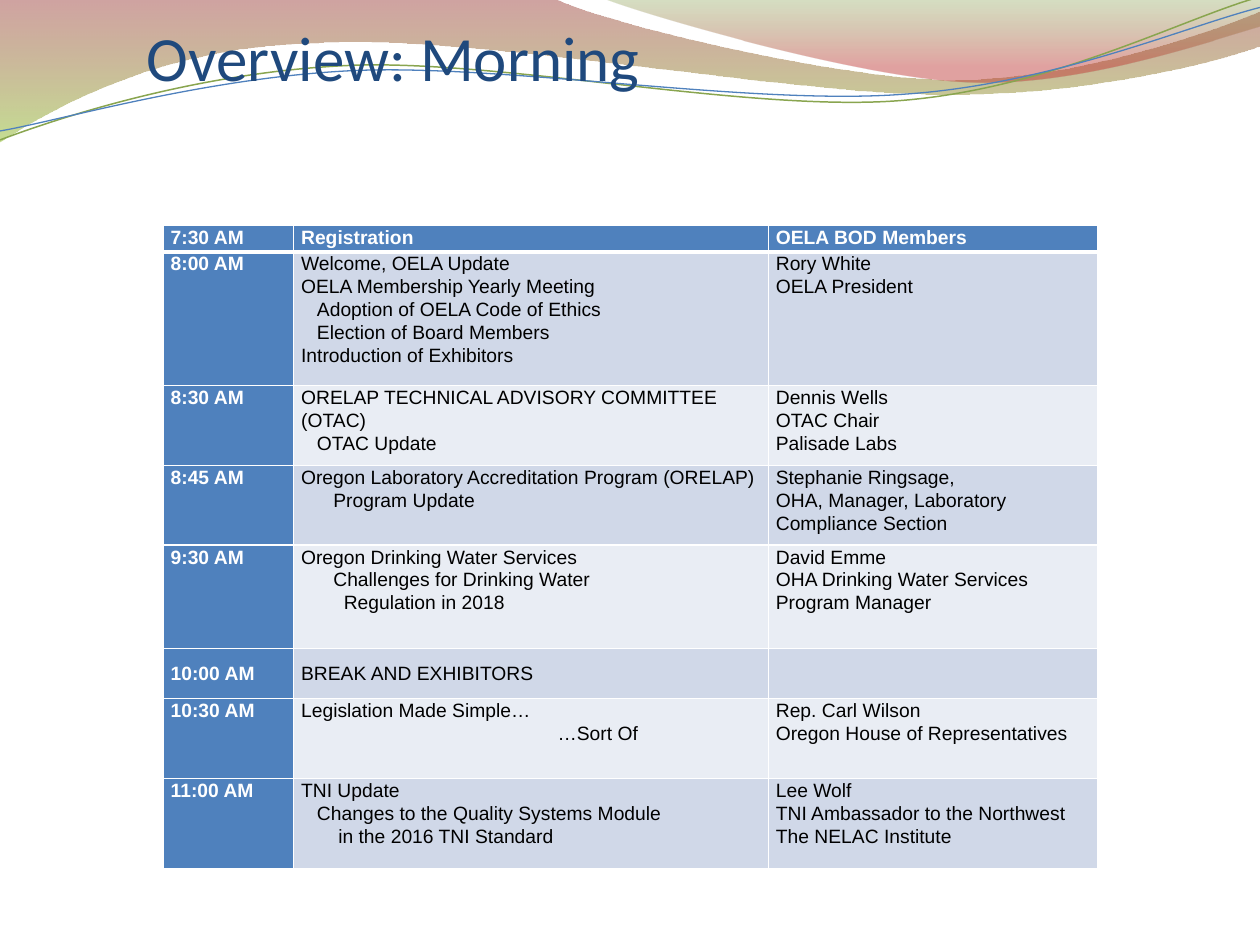
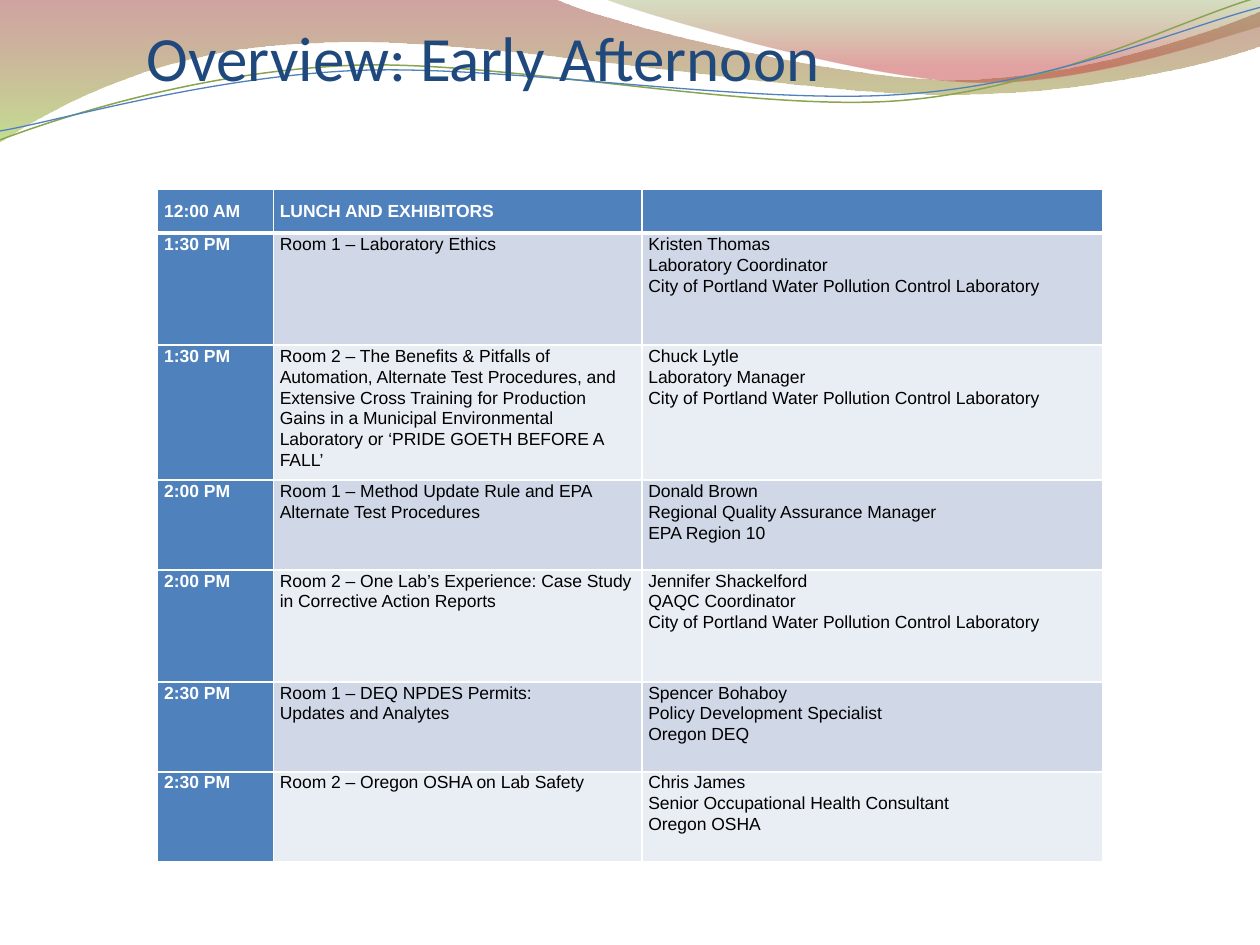
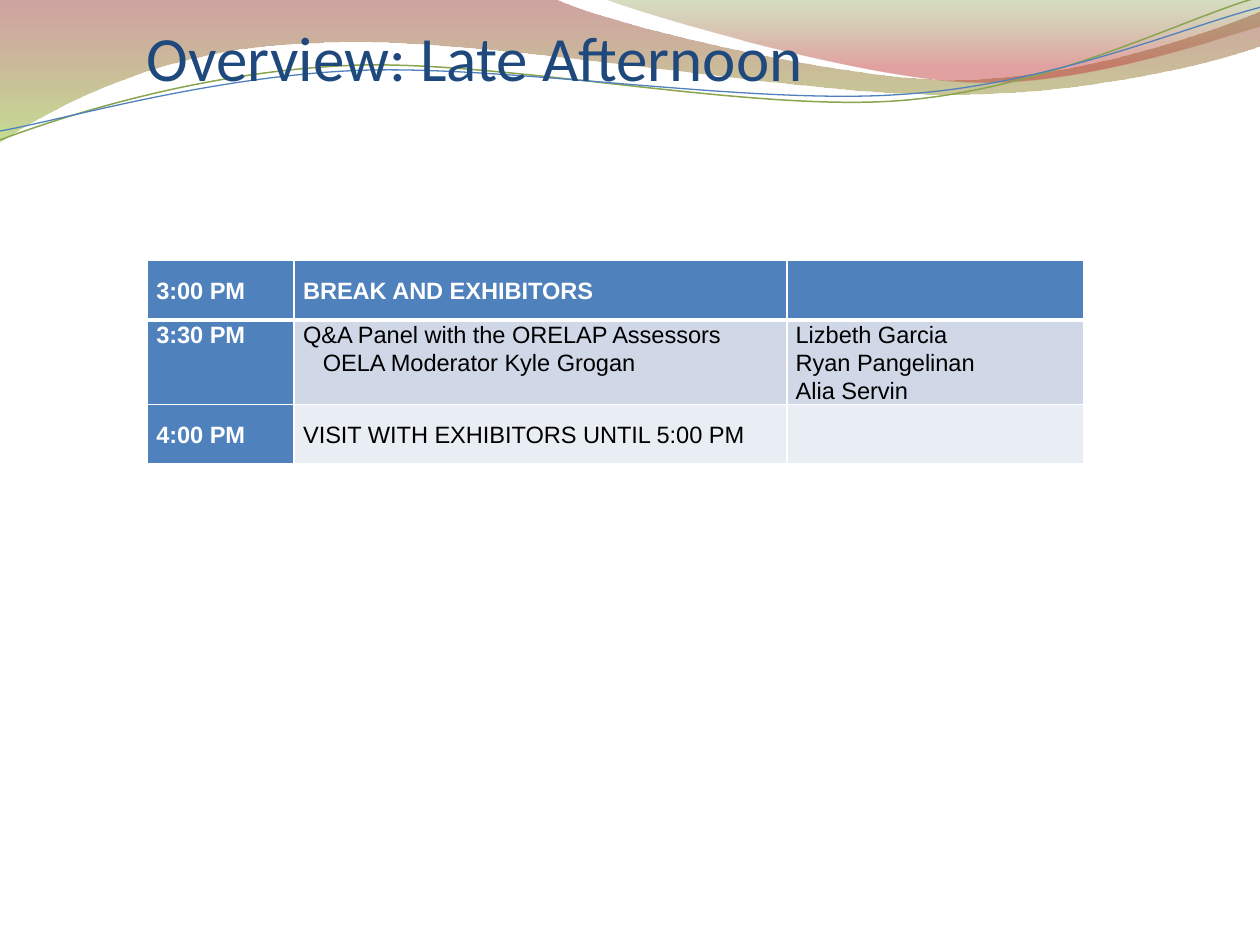
from math import cos, radians, sin

from lxml import etree
from pptx import Presentation
from pptx.dml.color import RGBColor
from pptx.enum import text
from pptx.oxml.ns import qn
from pptx.util import Cm, Pt

BLUE, NAVY, GREEN = "4F81BD", "1F497D", "89A54F"
WHITE, BLACK = "FFFFFF", "000000"
BANDS = ["E9EDF4", "D0D8E8"]
WAVE_TILT = -2.7
TITLE_BOTTOM = 1.9

# Outlines in cm: a start point, then segments of one point (line) or three (Bézier curve)
RIBBON = [[(0, 0)], [(11.18, -0.03)],
          [(12.09, 0.43), (16.87, 1.6), (19.25, 1.6)],
          [(21.67, 1.6), (24.33, 0.66), (25.4, 0.23)],
          [(25.43, 0.91)],
          [(24.97, 1.12), (22.1, 1.93), (18.95, 1.9)],
          [(15.8, 1.9), (9.7, 0.71), (6.53, 0.86)],
          [(3.28, 0.91), (1.17, 2.11), (-0.03, 2.87)],
          [(0, 0)]]
CREST = [[(12.17, -0.03)],
         [(12.93, 0.28), (17.32, 1.57), (19.53, 1.65)],
         [(21.74, 1.75), (24.41, 0.81), (25.4, 0.53)],
         [(25.4, 0)],
         [(12.17, -0.03)]]
GREEN_WAVE = [[(0, 2.82)],
              [(1.22, 2.36), (4.01, 1.45), (7.04, 1.32)],
              [(10.03, 1.19), (15.06, 2.26), (18.11, 2.03)],
              [(21.16, 1.8), (23.83, 0.38), (25.35, -0.05)]]
BLUE_WAVE = [[(0, 2.64)],
             [(1.19, 2.44), (4.17, 1.55), (7.19, 1.42)],
             [(10.24, 1.3), (15.16, 2.13), (18.21, 1.9)],
             [(21.23, 1.7), (23.9, 0.53), (25.4, 0.15)]]

# Each row: height in cm, time, topic lines, speaker lines; a (text, cm) line is indented
MORNING = [
    (0.53, "7:30 AM", ["Registration"], ["OELA BOD Members"]),
    (2.69, "8:00 AM",
     ["Welcome, OELA Update", "OELA Membership Yearly Meeting",
      ("Adoption of OELA Code of Ethics", 0.32), ("Election of Board Members", 0.32),
      "Introduction of Exhibitors"],
     ["Rory White", "OELA President"]),
    (1.61, "8:30 AM",
     ["ORELAP TECHNICAL ADVISORY COMMITTEE (OTAC)", ("OTAC Update", 0.32)],
     ["Dennis Wells", "OTAC Chair", "Palisade Labs"]),
    (1.61, "8:45 AM",
     ["Oregon Laboratory Accreditation Program (ORELAP)", ("Program Update", 0.65)],
     ["Stephanie Ringsage,", "OHA, Manager, Laboratory Compliance Section"]),
    (2.08, "9:30 AM",
     ["Oregon Drinking Water Services", ("Challenges for Drinking Water", 0.65),
      ("Regulation in 2018", 0.86)],
     ["David Emme", "OHA Drinking Water Services", "Program Manager"]),
    (1.01, "10:00 AM", ["BREAK AND EXHIBITORS"], []),
    (1.61, "10:30 AM", ["Legislation Made Simple…", ("…Sort Of", 5.17)],
     ["Rep. Carl Wilson", "Oregon House of Representatives"]),
    (1.83, "11:00 AM",
     ["TNI Update", ("Changes to the Quality Systems Module", 0.32),
      ("in the 2016 TNI Standard", 0.75)],
     ["Lee Wolf", "TNI Ambassador to the Northwest", "The NELAC Institute"]),
]
PORTLAND_LAB = "City of Portland Water Pollution Control Laboratory"
EARLY_AFTERNOON = [
    (0.89, "12:00 AM", ["LUNCH AND EXHIBITORS"], []),
    (2.26, "1:30 PM", ["Room 1 – Laboratory Ethics"],
     ["Kristen Thomas", "Laboratory Coordinator", PORTLAND_LAB]),
    (2.72, "1:30 PM",
     ["Room 2 – The Benefits & Pitfalls of Automation, Alternate Test Procedures, and "
      "Extensive Cross Training for Production Gains in a Municipal Environmental "
      "Laboratory or ‘PRIDE GOETH BEFORE A FALL’"],
     ["Chuck Lytle", "Laboratory Manager", PORTLAND_LAB]),
    (1.81, "2:00 PM", ["Room 1 – Method Update Rule and EPA Alternate Test Procedures"],
     ["Donald Brown", "Regional Quality Assurance Manager", "EPA Region 10"]),
    (2.26, "2:00 PM",
     ["Room 2 – One Lab’s Experience: Case Study in Corrective Action Reports"],
     ["Jennifer Shackelford", "QAQC Coordinator", PORTLAND_LAB]),
    (1.81, "2:30 PM", ["Room 1 – DEQ NPDES Permits:", "Updates and Analytes"],
     ["Spencer Bohaboy", "Policy Development Specialist", "Oregon DEQ"]),
    (1.81, "2:30 PM", ["Room 2 – Oregon OSHA on Lab Safety"],
     ["Chris James", "Senior Occupational Health Consultant", "Oregon OSHA"]),
]
LATE_AFTERNOON = [
    (1.2, "3:00 PM", ["BREAK AND EXHIBITORS"], []),
    (1.68, "3:30 PM",
     ["Q&A Panel with the ORELAP Assessors", ("OELA Moderator Kyle Grogan", 0.4)],
     ["Lizbeth Garcia", "Ryan Pangelinan", "Alia Servin"]),
    (1.2, "4:00 PM", ["VISIT WITH EXHIBITORS UNTIL 5:00 PM"], []),
]


def color(hex_string):
    return RGBColor.from_string(hex_string)


def level(outline, tilt, center=(12.68, 1.46)):
    """Turn the outline back by its tilt, so that the shape's rotation restores it."""
    c, s = cos(radians(tilt)), sin(radians(tilt))
    offsets = [[(x - center[0], y - center[1]) for x, y in segment] for segment in outline]
    return [[(center[0] + x * c + y * s, center[1] - x * s + y * c) for x, y in segment]
            for segment in offsets]


def bend_segments(shape, segments):
    """Turn the shape's line segments into cubic curves where three points are given."""
    for line, segment in zip(list(shape.element.iter(qn("a:lnTo"))), segments):
        if len(segment) == 3:
            curve = etree.Element(qn("a:cubicBezTo"))
            for x, y in segment:
                etree.SubElement(curve, qn("a:pt"), x=str(x - shape.left), y=str(y - shape.top))
            line.getparent().replace(line, curve)


def set_borders(cell, top, bottom):
    properties = cell._tc.get_or_add_tcPr()
    for side, width in (("L", 1), ("R", 1), ("T", top), ("B", bottom)):
        line = etree.SubElement(properties, qn(f"a:ln{side}"), w=str(Pt(width)))
        fill = etree.SubElement(line, qn("a:solidFill"))
        etree.SubElement(fill, qn("a:srgbClr"), val=WHITE)


class Agenda:
    def __init__(self):
        self.presentation = Presentation()
        self.presentation.slide_width = Cm(25.4)
        self.presentation.slide_height = Cm(19.05)
        self.layout = self.presentation.slide_layouts.get_by_name("Title Only")
        self.slide = None
        self.wave_count = 0

    def add_slide(self, title, top=0):
        self.slide = self.presentation.slides.add_slide(self.layout)
        shape = self.slide.shapes.title
        shape.left, shape.top = Cm(2.96), Cm(top)
        shape.width, shape.height = Cm(21.16), Cm(TITLE_BOTTOM - top)
        frame = shape.text_frame
        frame.text = title
        frame.auto_size = text.MSO_AUTO_SIZE.NONE
        frame.vertical_anchor = text.MSO_ANCHOR.BOTTOM
        frame.margin_left = frame.margin_right = frame.margin_bottom = 0
        frame.paragraphs[0].alignment = text.PP_ALIGN.LEFT
        self.format_runs(frame.paragraphs[0], 36, "Calibri", NAVY)

    def format_runs(self, paragraph, size, font_name, font_color, bold=False):
        for run in paragraph.runs:
            run.font.size, run.font.name, run.font.bold = Pt(size), font_name, bold
            run.font.color.rgb = color(font_color)

    def add_outline(self, outline, close):
        """Draw an outline and move it to the layout, behind the placeholders."""
        start, *segments = [[(Cm(x), Cm(y)) for x, y in segment] for segment in outline]
        builder = self.slide.shapes.build_freeform(*start[0])
        builder.add_line_segments([segment[-1] for segment in segments], close=close)
        shape = builder.convert_to_shape()
        bend_segments(shape, segments)
        shape.shadow.inherit = False
        self.layout.shapes.element.insert(2 + self.wave_count, shape.element)
        self.wave_count += 1
        shape.element.nvSpPr.cNvPr.set("id", str(100 + self.wave_count))
        return shape

    def add_gradient_band(self, outline, stops):
        """Each stop is a position, a colour and an opacity in percent."""
        shape = self.add_outline(outline, close=True)
        shape.line.fill.background()
        shape.fill.gradient()
        shape.fill.gradient_angle = 270
        for stop, (position, stop_color, _) in zip(shape.fill.gradient_stops, stops):
            stop.position = position
            stop.color.rgb = color(stop_color)
        for element, (_, _, opacity) in zip(shape.element.iter(qn("a:srgbClr")), stops):
            etree.SubElement(element, qn("a:alpha"), val=str(opacity * 1000))

    def add_wave_line(self, outline, line_color, width):
        shape = self.add_outline(level(outline, WAVE_TILT), close=False)
        shape.rotation = WAVE_TILT
        shape.fill.background()
        shape.line.color.rgb = color(line_color)
        shape.line.width = Pt(width)

    def add_waves(self):
        self.add_gradient_band(RIBBON, [(0, "973330", 45), (1, "95C238", 55)])
        self.add_gradient_band(CREST, [(0, "769537", 30), (0.8, "BE3330", 45)])
        self.add_wave_line(GREEN_WAVE, GREEN, 0.85)
        self.add_wave_line(BLUE_WAVE, BLUE, 0.75)

    def add_schedule(self, rows, left, top, widths, size, margin):
        height = sum(row[0] for row in rows)
        table = self.slide.shapes.add_table(len(rows), len(widths), Cm(left), Cm(top),
                                            Cm(sum(widths)), Cm(height)).table
        for column, width in zip(table.columns, widths):
            column.width = Cm(width)
        for i, (row_height, time, topic, speaker) in enumerate(rows):
            table.rows[i].height = Cm(row_height)
            for j, lines in enumerate(([time], topic, speaker)):
                cell = table.cell(i, j)
                heading = i == 0 or j == 0
                set_borders(cell, top=3 if i == 1 else 1, bottom=3 if i == 0 else 1)
                cell.fill.solid()
                cell.fill.fore_color.rgb = color(BLUE if heading else BANDS[i % 2])
                cell.margin_left = cell.margin_right = Cm(margin)
                cell.margin_top = cell.margin_bottom = 0
                cell.vertical_anchor = text.MSO_ANCHOR.TOP if speaker else text.MSO_ANCHOR.MIDDLE
                self.fill_cell(cell, lines, size, heading)

    def fill_cell(self, cell, lines, size, heading):
        lines = [line if isinstance(line, tuple) else (line, 0) for line in lines]
        cell.text_frame.text = "\n".join(line for line, _ in lines)
        for paragraph, (_, indent) in zip(cell.text_frame.paragraphs, lines):
            paragraph.line_spacing = 1.07
            if indent:
                paragraph._p.get_or_add_pPr().set("marL", str(Cm(indent)))
            self.format_runs(paragraph, size, "Arial", WHITE if heading else BLACK, heading)


def main():
    agenda = Agenda()
    agenda.add_slide("Overview: Morning", top=0.63)
    agenda.add_waves()
    agenda.add_schedule(MORNING, 3.29, 4.55, [2.63, 9.57, 6.63], size=11, margin=0.15)
    agenda.add_slide("Overview: Early Afternoon")
    agenda.add_schedule(EARLY_AFTERNOON, 3.18, 3.81, [2.33, 7.43, 9.29], size=10, margin=0.13)
    agenda.add_slide("Overview: Late Afternoon")
    agenda.add_schedule(LATE_AFTERNOON, 2.97, 5.25, [2.96, 9.93, 5.99], size=13.5, margin=0.18)
    agenda.presentation.save("out.pptx")


if __name__ == "__main__":
    main()
